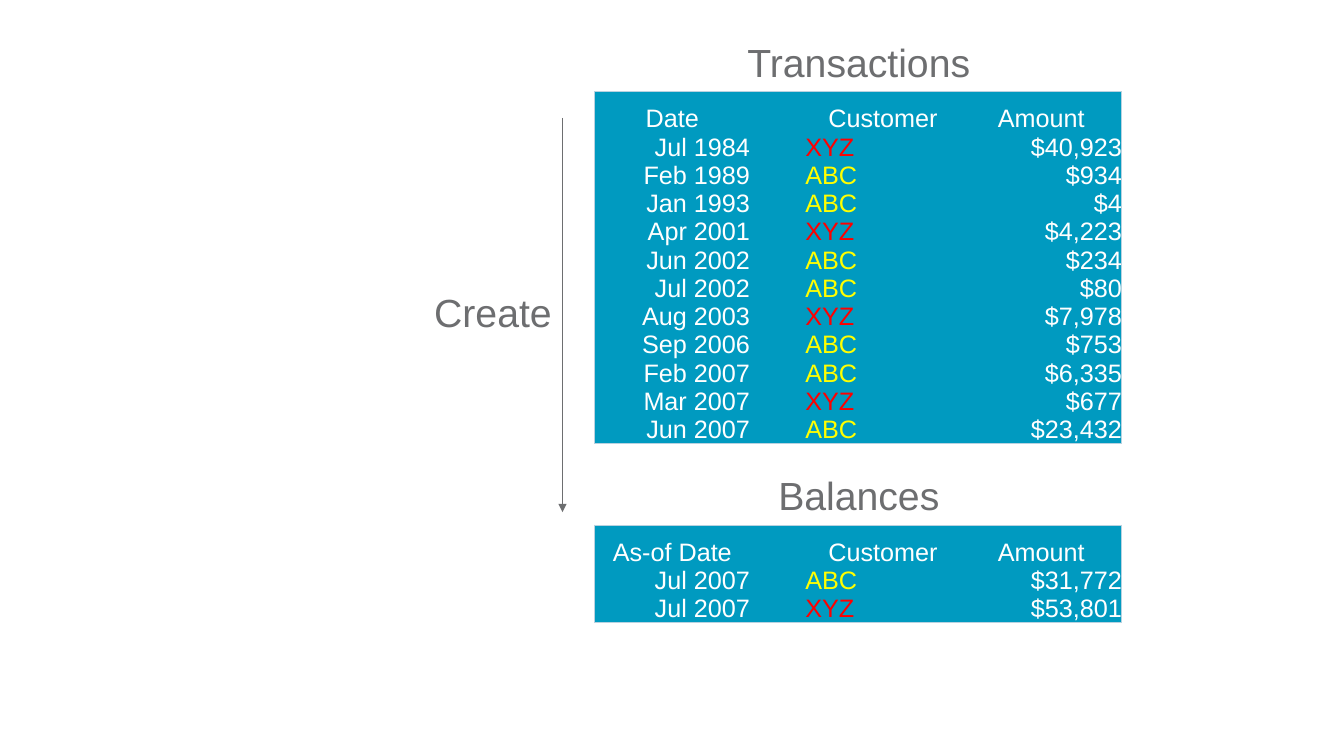
from lxml.etree import SubElement
from pptx import Presentation
from pptx.dml.color import RGBColor
from pptx.enum.shapes import MSO_CONNECTOR
from pptx.enum.text import MSO_ANCHOR, MSO_AUTO_SIZE, PP_ALIGN as Align
from pptx.oxml.ns import qn
from pptx.util import Pt

TEAL = RGBColor(0x00, 0x9A, 0xC0)
EDGE = RGBColor(0xB8, 0xD2, 0xE0)
GRAY = RGBColor(0x6D, 0x6E, 0x70)
WHITE = RGBColor(0xFF, 0xFF, 0xFF)
RED = RGBColor(0xFF, 0x00, 0x00)
YELLOW = RGBColor(0xFF, 0xFF, 0x00)

CUSTOMER_COLORS = {"XYZ": RED, "ABC": YELLOW}
LEDGER_LEFT = 424.8
COLUMN_WIDTHS = [110.9, 39.6, 110.9, 115.2]
HEADER_HEIGHT, ROW_HEIGHT = 29.52, 20.16

TRANSACTIONS = [
    ("Date", "", "Customer", "Amount"),
    ("Jul 1984", "", "XYZ", "$40,923"),
    ("Feb 1989", "", "ABC", "$934"),
    ("Jan 1993", "", "ABC", "$4"),
    ("Apr 2001", "", "XYZ", "$4,223"),
    ("Jun 2002", "", "ABC", "$234"),
    ("Jul 2002", "", "ABC", "$80"),
    ("Aug 2003", "", "XYZ", "$7,978"),
    ("Sep 2006", "", "ABC", "$753"),
    ("Feb 2007", "", "ABC", "$6,335"),
    ("Mar 2007", "", "XYZ", "$677"),
    ("Jun 2007", "", "ABC", "$23,432"),
]
BALANCES = [
    ("As-of Date", "", "Customer", "Amount"),
    ("Jul 2007", "", "ABC", "$31,772"),
    ("Jul 2007", "", "XYZ", "$53,801"),
]


def write_text(frame, text, size=18, color=WHITE, align=Align.CENTER):
    paragraph = frame.paragraphs[0]
    paragraph.alignment = align
    paragraph.line_spacing = 0.9
    run = paragraph.add_run()
    run.text = text
    run.font.name = "Arial"
    run.font.size = Pt(size)
    run.font.color.rgb = color


def add_label(slide, text, left, top, width):
    label = slide.shapes.add_textbox(Pt(left), Pt(top), Pt(width), Pt(38.2))
    frame = label.text_frame
    frame.word_wrap = False
    frame.auto_size = MSO_AUTO_SIZE.SHAPE_TO_FIT_TEXT
    write_text(frame, text, size=28, color=GRAY)


def set_borders(cell, outer_sides):
    properties = cell._tc.get_or_add_tcPr()
    for side in "LRTB":
        border = SubElement(properties, qn(f"a:ln{side}"), w=str(Pt(0.75)))
        if side in outer_sides:
            fill = SubElement(border, qn("a:solidFill"))
            SubElement(fill, qn("a:srgbClr"), val=str(EDGE))
        else:
            SubElement(border, qn("a:noFill"))


def add_ledger(slide, records, top):
    height = HEADER_HEIGHT + ROW_HEIGHT * (len(records) - 1)
    ledger = slide.shapes.add_table(
        len(records), len(COLUMN_WIDTHS), Pt(LEDGER_LEFT), Pt(top),
        Pt(sum(COLUMN_WIDTHS)), Pt(height)).table
    ledger.first_row = ledger.horz_banding = False
    for column, width in zip(ledger.columns, COLUMN_WIDTHS):
        column.width = Pt(width)
    last_row, last_column = len(records) - 1, len(COLUMN_WIDTHS) - 1
    body_aligns = [Align.RIGHT, Align.LEFT, Align.LEFT, Align.RIGHT]
    for r, record in enumerate(records):
        ledger.rows[r].height = Pt(ROW_HEIGHT if r else HEADER_HEIGHT)
        for c, text in enumerate(record):
            cell = ledger.cell(r, c)
            cell.margin_left = cell.margin_right = 0
            cell.margin_top = cell.margin_bottom = 0
            cell.vertical_anchor = MSO_ANCHOR.BOTTOM
            outer = {"L": c == 0, "R": c == last_column,
                     "T": r == 0, "B": r == last_row}
            set_borders(cell, [side for side in outer if outer[side]])
            cell.fill.solid()
            cell.fill.fore_color.rgb = TEAL
            write_text(cell.text_frame, text,
                       color=CUSTOMER_COLORS.get(text, WHITE),
                       align=body_aligns[c] if r else Align.CENTER)


def add_down_arrow(slide, x, top, bottom):
    arrow = slide.shapes.add_connector(
        MSO_CONNECTOR.STRAIGHT, Pt(x), Pt(top), Pt(x), Pt(bottom))
    arrow.line.color.rgb = GRAY
    arrow.line.width = Pt(0.75)
    properties = arrow._element.spPr
    SubElement(properties.find(qn("a:ln")), qn("a:tailEnd"), type="triangle")
    SubElement(properties, qn("a:effectLst"))


def main():
    deck = Presentation()
    deck.slide_width, deck.slide_height = Pt(960), Pt(540)
    slide = deck.slides.add_slide(deck.slide_layouts[6])
    add_ledger(slide, TRANSACTIONS, top=65.5)
    add_ledger(slide, BALANCES, top=375)
    add_label(slide, "Balances", left=547.9, top=337, width=131)
    add_label(slide, "Transactions", left=525.6, top=27.4, width=175.7)
    add_down_arrow(slide, x=401.8, top=84.2, bottom=365.8)
    add_label(slide, "Create", left=302.4, top=206, width=99.4)
    deck.save("out.pptx")


if __name__ == "__main__":
    main()
